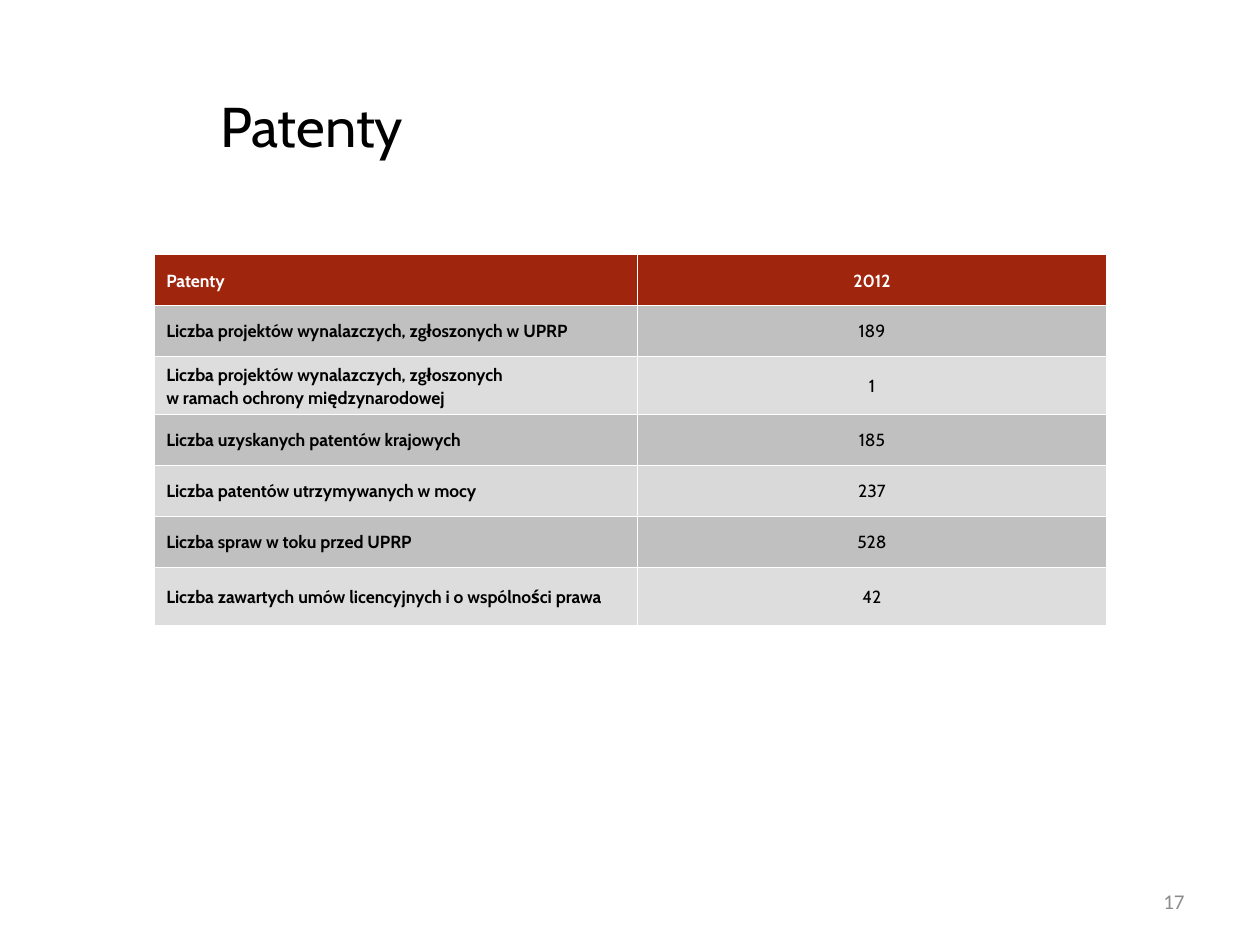
import pptx
import pptx.util
import pptx.dml.color
import pptx.enum.text
import pptx.oxml.ns
from lxml import etree

Inches, Pt = pptx.util.Inches, pptx.util.Pt
ALIGN = pptx.enum.text.PP_ALIGN
MIDDLE = pptx.enum.text.MSO_ANCHOR.MIDDLE

COLORS = {
    "text": "000000", "header text": "FFFFFF", "border": "FFFFFF", "page": "8C8C8C",
    "header": "9F250D", "dark": "C0C0C0", "light": "DDDDDD", "medium": "D9D9D9",
}
TITLE = "Patenty"
PAGE_NUMBER = "17"
# label, value, fill, whether the row is tall
ROWS = [
    ("Patenty", "2012", "header", False),
    ("Liczba projektów wynalazczych, zgłoszonych w UPRP", "189", "dark", False),
    ("Liczba projektów wynalazczych, zgłoszonych\nw ramach ochrony międzynarodowej", "1", "light", True),
    ("Liczba uzyskanych patentów krajowych", "185", "dark", False),
    ("Liczba patentów utrzymywanych w mocy", "237", "medium", False),
    ("Liczba spraw w toku przed UPRP", "528", "dark", False),
    ("Liczba zawartych umów licencyjnych i o wspólności prawa", "42", "light", True),
]
COLUMN_WIDTHS = (3.84, 3.72)
TABLE_HEIGHT, TALL_ROW = 2.94, 0.46


def rgb(name):
    return pptx.dml.color.RGBColor.from_string(COLORS[name])


def write(paragraph, text, size, font, color, align, bold=False):
    paragraph.alignment = align
    for number, line in enumerate(text.split("\n")):
        if number:
            paragraph.add_line_break()
        run = paragraph.add_run()
        run.text = line
        run.font.size, run.font.name, run.font.bold = Pt(size), font, bold
        run.font.color.rgb = rgb(color)


def add_text(slide, box, *style):
    frame = slide.shapes.add_textbox(*map(Inches, box)).text_frame
    frame.word_wrap = True
    frame.vertical_anchor = MIDDLE
    write(frame.paragraphs[0], *style)
    return frame.paragraphs[0]


def add_borders(cell):
    properties = cell._tc.get_or_add_tcPr()
    for position, side in enumerate(("lnL", "lnR", "lnT", "lnB")):
        line = etree.Element(pptx.oxml.ns.qn(f"a:{side}"), w=str(Pt(0.23)))
        fill = etree.SubElement(line, pptx.oxml.ns.qn("a:solidFill"))
        etree.SubElement(fill, pptx.oxml.ns.qn("a:srgbClr"), val=COLORS["border"])
        properties.insert(position, line)


def add_patent_table(slide):
    table = slide.shapes.add_table(
        len(ROWS), len(COLUMN_WIDTHS), Inches(1.22), Inches(2.02),
        Inches(sum(COLUMN_WIDTHS)), Inches(TABLE_HEIGHT)).table
    for column, width in zip(table.columns, COLUMN_WIDTHS):
        column.width = Inches(width)

    tall_count = sum(tall for *_, tall in ROWS)
    normal_row = (TABLE_HEIGHT - tall_count * TALL_ROW) / (len(ROWS) - tall_count)
    for row, (label, value, fill, tall) in zip(table.rows, ROWS):
        row.height = Inches(TALL_ROW if tall else normal_row)
        header = fill == "header"
        color = "header text" if header else "text"
        contents = ((label, ALIGN.LEFT, True), (value, ALIGN.CENTER, header))
        for cell, (text, align, bold) in zip(row.cells, contents):
            cell.fill.solid()
            cell.fill.fore_color.rgb = rgb(fill)
            add_borders(cell)
            cell.vertical_anchor = MIDDLE
            paragraph = cell.text_frame.paragraphs[0]
            paragraph.line_spacing = 1.08
            write(paragraph, text, 10, "Cabin", color, align, bold)


def main():
    deck = pptx.Presentation()
    deck.slide_width, deck.slide_height = Inches(10), Inches(7.5)
    slide = deck.slides.add_slide(deck.slide_layouts[6])
    title = add_text(slide, (1.26, 0.6, 8.24, 0.79), TITLE, 32, "Cabin", "text", ALIGN.LEFT)
    title._p.get_or_add_pPr().set("indent", str(Inches(0.39)))
    add_patent_table(slide)
    add_text(slide, (7.17, 6.95, 2.33, 0.4), PAGE_NUMBER, 12, "Calibri", "page", ALIGN.RIGHT)
    deck.save("out.pptx")


if __name__ == "__main__":
    main()
